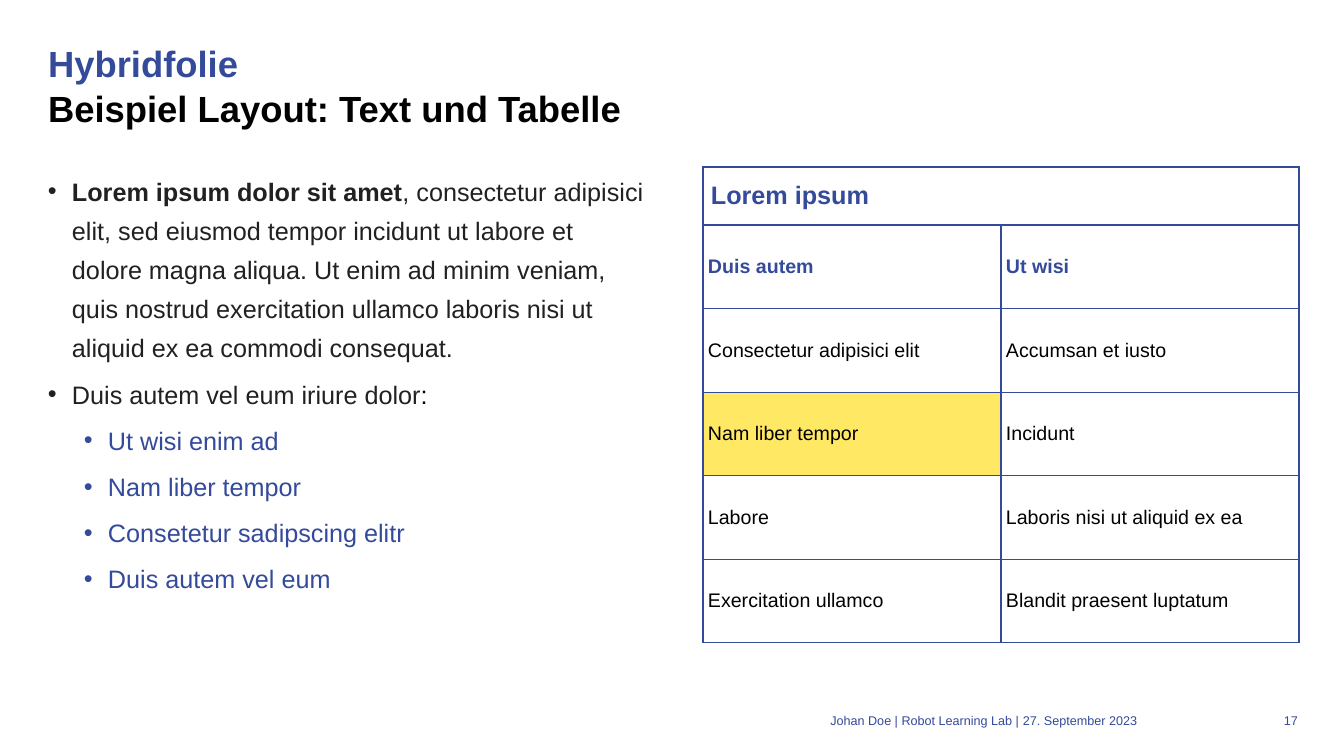
from lxml.etree import SubElement
from pptx import Presentation
from pptx.dml.color import RGBColor
from pptx.enum.text import MSO_ANCHOR, MSO_AUTO_SIZE, PP_ALIGN
from pptx.oxml.ns import qn
from pptx.util import Emu, Pt

EMU_PER_PX = 12192000 / 1344
SLIDE_SIZE = (1344, 756)
BLUE = RGBColor(0x34, 0x4A, 0x9A)
BORDER_BLUE = RGBColor(0x33, 0x4A, 0x9A)
BLACK = RGBColor(0x00, 0x00, 0x00)
TEXT_GREY = RGBColor(0x20, 0x21, 0x22)
YELLOW = RGBColor(0xFF, 0xE8, 0x63)

TITLE_BOX = (48, 40, 1250, 107)
BODY_BOX = (48, 167, 596, 516)
TABLE_BOX = (703, 167, 596, 476)
FOOTER_BOX = (329, 713, 969, 20)

BULLETS = [
    (0, [("Lorem ipsum dolor sit amet", TEXT_GREY, True),
         (", consectetur adipisici elit, sed eiusmod tempor incidunt ut labore et "
          "dolore magna aliqua. Ut enim ad minim veniam, quis nostrud exercitation "
          "ullamco laboris nisi ut aliquid ex ea commodi consequat.", TEXT_GREY, False)]),
    (0, [("Duis autem vel eum iriure dolor", TEXT_GREY, False), (":", BLACK, False)]),
    (1, [("Ut wisi enim ad", BLUE, False)]),
    (1, [("Nam liber tempor", BLUE, False)]),
    (1, [("Consetetur sadipscing elitr", BLUE, False)]),
    (1, [("Duis autem vel eum", BLUE, False)]),
]
TABLE_ROWS = [
    ("Lorem ipsum", ""),
    ("Duis autem", "Ut wisi"),
    ("Consectetur adipisici elit", "Accumsan et iusto"),
    ("Nam liber tempor", "Incidunt"),
    ("Labore", "Laboris nisi ut aliquid ex ea"),
    ("Exercitation ullamco", "Blandit praesent luptatum"),
]
HIGHLIGHTED_CELL = (3, 0)


def px(length):
    return Emu(round(length * EMU_PER_PX))


def set_attributes(target, values):
    for name, value in values.items():
        setattr(target, name, value)


def add_run(paragraph, text, size, color, bold=False):
    run = paragraph.add_run()
    run.text = text
    set_attributes(run.font, {"name": "Arial", "size": Pt(size), "bold": bold})
    run.font.color.rgb = color


def format_frame(frame, left_inset=0):
    set_attributes(frame, {
        "margin_left": px(left_inset), "margin_top": 0, "margin_right": 0,
        "margin_bottom": 0, "word_wrap": True, "auto_size": MSO_AUTO_SIZE.NONE,
        "vertical_anchor": MSO_ANCHOR.TOP})


def add_text_frame(slide, box, left_inset=0):
    frame = slide.shapes.add_textbox(*map(px, box)).text_frame
    format_frame(frame, left_inset)
    return frame


def fill_title(slide, box):
    title = slide.shapes.title
    set_attributes(title, dict(zip(("left", "top", "width", "height"), map(px, box))))
    format_frame(title.text_frame)
    paragraph = title.text_frame.paragraphs[0]
    set_attributes(paragraph, {"alignment": PP_ALIGN.LEFT, "line_spacing": Pt(32)})
    add_run(paragraph, "Hybridfolie", 26, BLUE, True)
    paragraph.add_line_break()
    add_run(paragraph, "Beispiel Layout: Text und Tabelle", 26, BLACK, True)


def add_bullet(paragraph, level):
    properties = paragraph._p.get_or_add_pPr()
    properties.set("marL", str(px(24 + 36 * level)))
    properties.set("indent", str(px(-24)))
    SubElement(properties, qn("a:buFont")).set("typeface", "Arial")
    SubElement(properties, qn("a:buChar")).set("char", "•")


def add_body(slide, box):
    frame = add_text_frame(slide, box)
    for index, (level, runs) in enumerate(BULLETS):
        paragraph = frame.add_paragraph() if index else frame.paragraphs[0]
        add_bullet(paragraph, level)
        set_attributes(paragraph, {
            "level": level, "line_spacing": Pt(28), "space_before": Pt(5 if index else 0)})
        for text, color, bold in runs:
            add_run(paragraph, text, 18, color, bold)


def add_borders(cell):
    properties = cell._tc.get_or_add_tcPr()
    for side in ("lnL", "lnR", "lnT", "lnB"):
        line = SubElement(properties, qn(f"a:{side}"), w=str(Pt(1)))
        fill = SubElement(line, qn("a:solidFill"))
        SubElement(fill, qn("a:srgbClr"), val=str(BORDER_BLUE))


def format_cell(cell, row, column):
    horizontal, vertical = (px(8), px(4)) if row == 0 else (px(5), px(5))
    set_attributes(cell, {
        "margin_left": horizontal, "margin_right": horizontal,
        "margin_top": vertical, "margin_bottom": vertical,
        "vertical_anchor": MSO_ANCHOR.MIDDLE})
    add_borders(cell)
    if (row, column) == HIGHLIGHTED_CELL:
        cell.fill.solid()
        cell.fill.fore_color.rgb = YELLOW
    else:
        cell.fill.background()


def add_lorem_table(slide, box):
    width, height = box[2:]
    header_height = 58
    row_height = (height - header_height) / (len(TABLE_ROWS) - 1)
    table = slide.shapes.add_table(len(TABLE_ROWS), 2, *map(px, box)).table
    set_attributes(table, {"first_row": False, "horz_banding": False})
    for column in table.columns:
        column.width = px(width / 2)
    for row, texts in enumerate(TABLE_ROWS):
        table.rows[row].height = px(row_height if row else header_height)
        is_heading = row < 2
        for column, text in enumerate(texts):
            cell = table.cell(row, column)
            format_cell(cell, row, column)
            if text:
                add_run(cell.text_frame.paragraphs[0], text, 14 if row else 18,
                        BLUE if is_heading else BLACK, is_heading)
    table.cell(0, 0).merge(table.cell(0, 1))


def add_footer(slide, box):
    left, top, width, height = box
    parts = [
        ("Johan Doe | Robot Learning Lab |", 0, 690, 0, PP_ALIGN.RIGHT),
        ("27. September 2023", 690, 158, 4, PP_ALIGN.LEFT),
        ("17", width - 39, 39, 0, PP_ALIGN.RIGHT),
    ]
    for text, offset, part_width, inset, alignment in parts:
        frame = add_text_frame(slide, (left + offset, top, part_width, height), inset)
        paragraph = frame.paragraphs[0]
        paragraph.alignment = alignment
        add_run(paragraph, text, 9, BLUE)


def main():
    presentation = Presentation()
    set_attributes(presentation, dict(zip(("slide_width", "slide_height"), map(px, SLIDE_SIZE))))
    slide = presentation.slides.add_slide(presentation.slide_layouts[5])
    fill_title(slide, TITLE_BOX)
    add_body(slide, BODY_BOX)
    add_lorem_table(slide, TABLE_BOX)
    add_footer(slide, FOOTER_BOX)
    presentation.save("out.pptx")


if __name__ == "__main__":
    main()
